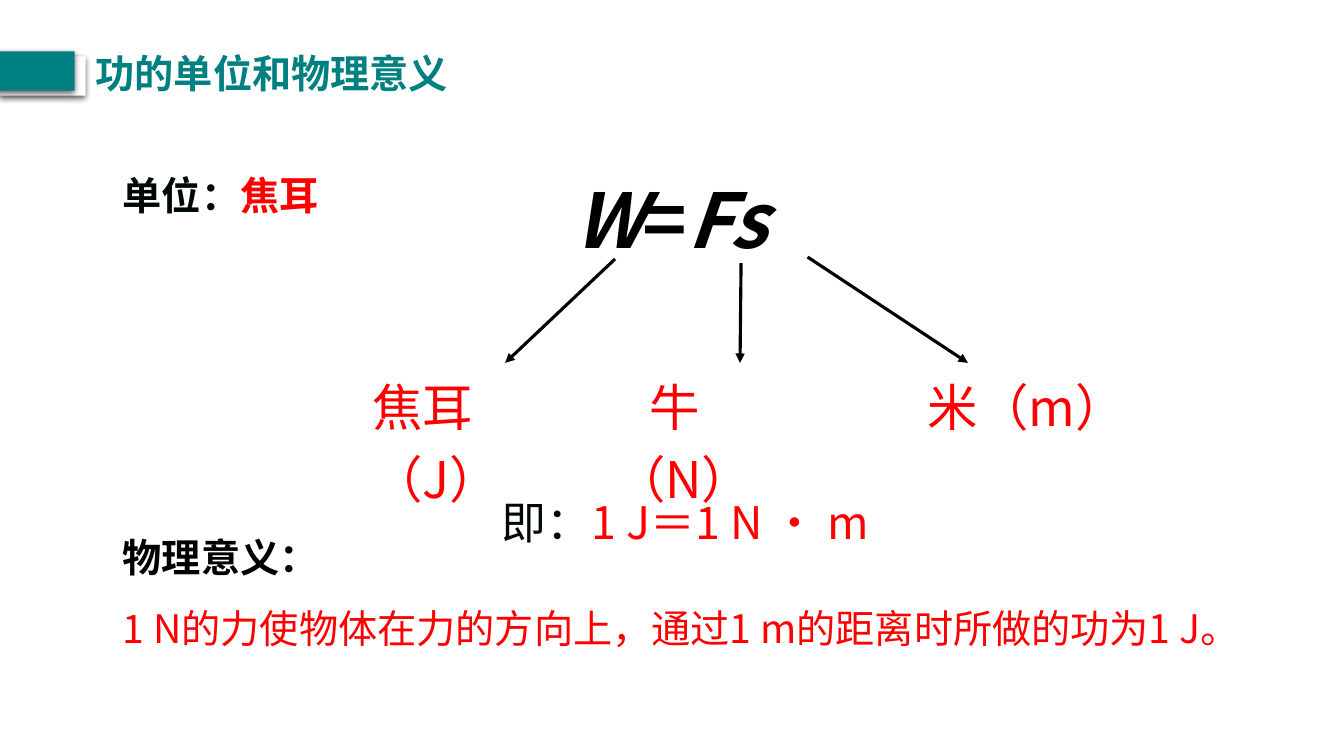
from dataclasses import dataclass

from lxml.etree import SubElement
from pptx import Presentation
from pptx.dml.color import RGBColor
from pptx.enum.shapes import MSO_CONNECTOR, MSO_SHAPE
from pptx.enum.text import MSO_AUTO_SIZE
from pptx.oxml.ns import qn
from pptx.slide import Slide
from pptx.util import Inches, Pt


@dataclass(frozen=True)
class Theme:
    font: str = "Noto Sans CJK SC"
    black: str = "000000"
    ink: str = "000808"
    red: str = "FF0000"
    teal: str = "008080"
    white: str = "FFFFFF"
    body: int = 28
    result: int = 32
    unit: int = 36
    formula: int = 54


THEME = Theme()


@dataclass(frozen=True)
class Run:
    text: str
    color: str
    bold: bool = False
    italic: bool = False


@dataclass(frozen=True)
class Box:
    at: tuple[float, float, float, float]
    size: int
    lines: tuple[tuple[Run, ...], ...]
    pitch: float = 1.0
    inset: tuple[float, float] = (0.1, 0.05)
    indent: float = 0


@dataclass(frozen=True)
class Arrow:
    start: tuple[float, float]
    end: tuple[float, float]


@dataclass(frozen=True)
class Bar:
    left: float
    top: float
    color: str


BARS = (Bar(0, 0.56, THEME.white), Bar(-0.11, 0.51, THEME.teal))

# One arrow from each letter of the formula to its unit
ARROWS = (
    Arrow((6.1, 2.57), (5.01, 3.6)),
    Arrow((7.35, 2.61), (7.34, 3.6)),
    Arrow((8.01, 2.55), (9.6, 3.6)),
)

BOXES = (
    # Heading
    Box((0.85, 0.44, 3.74, 0.57), THEME.body,
        ((Run("功的单位和物理意义", THEME.teal, bold=True),),)),
    # Unit of work
    Box((1.12, 1.56, 3.41, 0.67), THEME.body,
        ((Run("单位：", THEME.ink, bold=True),
          Run("焦耳", THEME.red, bold=True)),), pitch=1.2),
    # Formula
    Box((5.25, 1.67, 5.43, 1.01), THEME.formula,
        ((Run("W", THEME.black, bold=True, italic=True),
          Run("=", THEME.black, bold=True),
          Run("Fs", THEME.black, bold=True, italic=True)),), indent=0.34),
    # Units of the three quantities
    Box((3.67, 3.6, 1.99, 0.75), THEME.unit,
        ((Run("焦耳（J）", THEME.red),),), pitch=1.2, inset=(0.02, 0.01)),
    Box((6.1, 3.6, 2.09, 0.75), THEME.unit,
        ((Run("牛（N）", THEME.red),),), pitch=1.2, inset=(0, 0.01), indent=0.34),
    Box((8.96, 3.67, 2.25, 0.67), THEME.unit,
        ((Run("米（m）", THEME.red),),), pitch=1.1, inset=(0.02, 0), indent=0.22),
    # Resulting relation
    Box((4.88, 4.86, 4.53, 0.64), THEME.result,
        ((Run("即：", THEME.ink), Run("1 J＝1 N · m", THEME.red)),)),
    # Physical meaning
    Box((1.12, 5.01, 11.59, 1.52), THEME.body,
        ((Run("物理意义：", THEME.black, bold=True),),
         (Run("1 N的力使物体在力的方向上，通过1 m的距离时所做的功为1 J。", THEME.red),)),
        pitch=1.5),
)


def draw_bar(slide: Slide, bar: Bar) -> None:
    shape = slide.shapes.add_shape(
        MSO_SHAPE.RECTANGLE, Inches(bar.left), Inches(bar.top), Inches(0.85), Inches(0.39))
    shape.fill.solid()
    shape.fill.fore_color.rgb = RGBColor.from_string(bar.color)
    shape.line.fill.background()
    # Soft shadow below the bar
    shape.shadow.inherit = False
    effects = shape._element.spPr.find(qn("a:effectLst"))
    shadow = SubElement(effects, qn("a:outerShdw"), blurRad=str(Pt(4.5)),
                        dist=str(Pt(1.5)), dir="5400000", algn="t", rotWithShape="0")
    color = SubElement(shadow, qn("a:srgbClr"), val=THEME.black)
    SubElement(color, qn("a:alpha"), val="63000")


def draw_arrow(slide: Slide, arrow: Arrow) -> None:
    points = [Inches(value) for value in (*arrow.start, *arrow.end)]
    line = slide.shapes.add_connector(MSO_CONNECTOR.STRAIGHT, *points)
    line.line.color.rgb = RGBColor.from_string(THEME.black)
    line.line.width = Pt(2.25)
    SubElement(line.line._get_or_add_ln(), qn("a:tailEnd"), type="triangle")
    SubElement(line._element.spPr, qn("a:effectLst"))


def draw_box(slide: Slide, box: Box) -> None:
    frame = slide.shapes.add_textbox(*map(Inches, box.at)).text_frame
    frame.word_wrap = True
    frame.auto_size = MSO_AUTO_SIZE.SHAPE_TO_FIT_TEXT
    frame.margin_left = frame.margin_right = Inches(box.inset[0])
    frame.margin_top = frame.margin_bottom = Inches(box.inset[1])
    for order, line in enumerate(box.lines):
        para = frame.add_paragraph() if order else frame.paragraphs[0]
        para.line_spacing = box.pitch
        if box.indent:
            para._p.get_or_add_pPr().set("indent", str(Inches(box.indent)))
        for part in line:
            run = para.add_run()
            run.text = part.text
            font = run.font
            font.name = THEME.font
            font.size = Pt(box.size)
            font.bold = part.bold
            font.italic = part.italic
            font.color.rgb = RGBColor.from_string(part.color)
            SubElement(font._element, qn("a:ea"), typeface=THEME.font)


def main() -> None:
    deck = Presentation()
    deck.slide_width = Inches(13.33)
    deck.slide_height = Inches(7.5)
    slide = deck.slides.add_slide(deck.slide_layouts[6])
    for arrow in ARROWS:
        draw_arrow(slide, arrow)
    for bar in BARS:
        draw_bar(slide, bar)
    for box in BOXES:
        draw_box(slide, box)
    deck.save("out.pptx")


if __name__ == "__main__":
    main()
